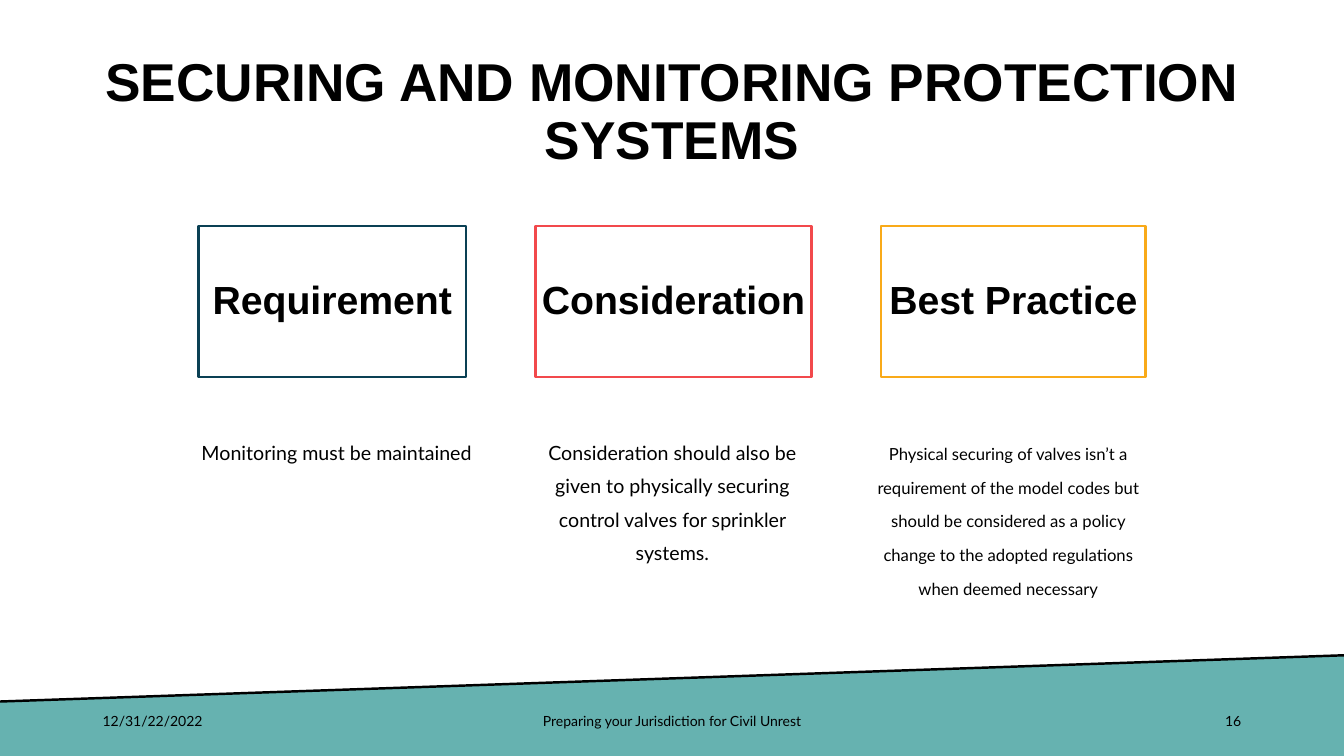
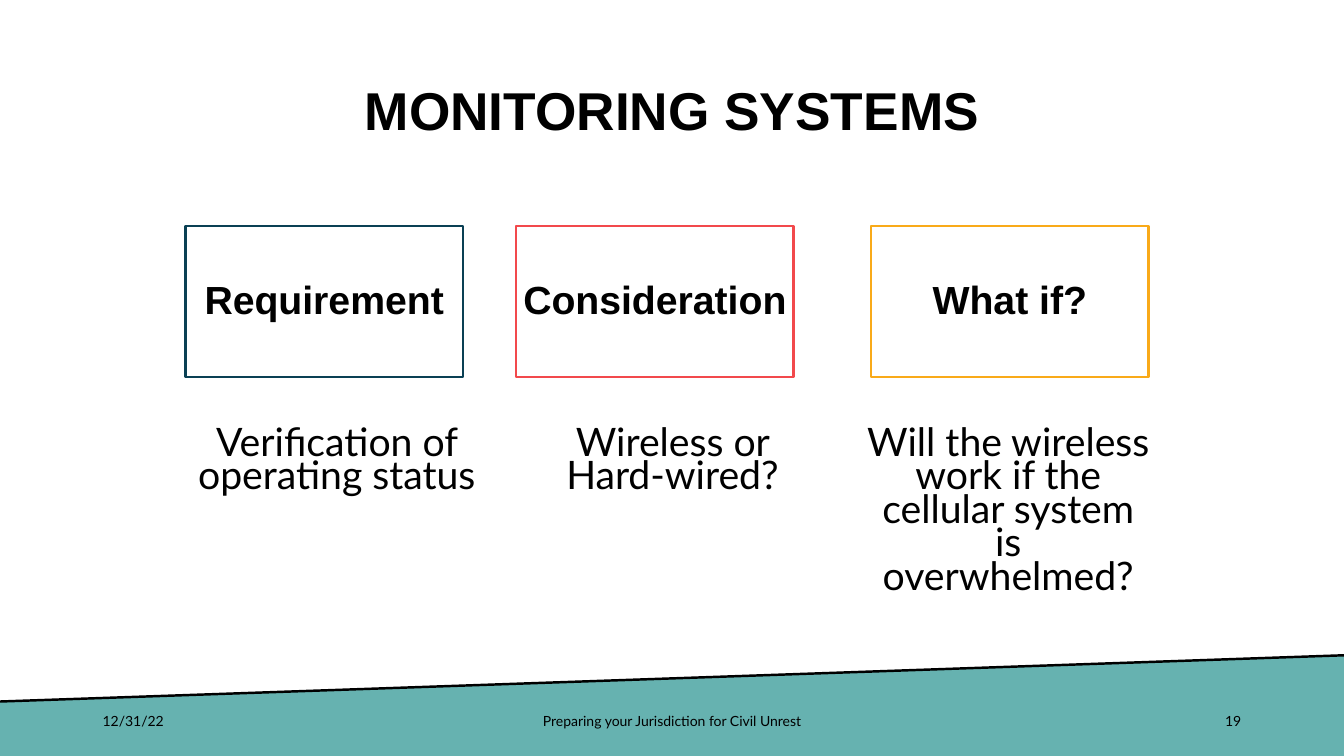
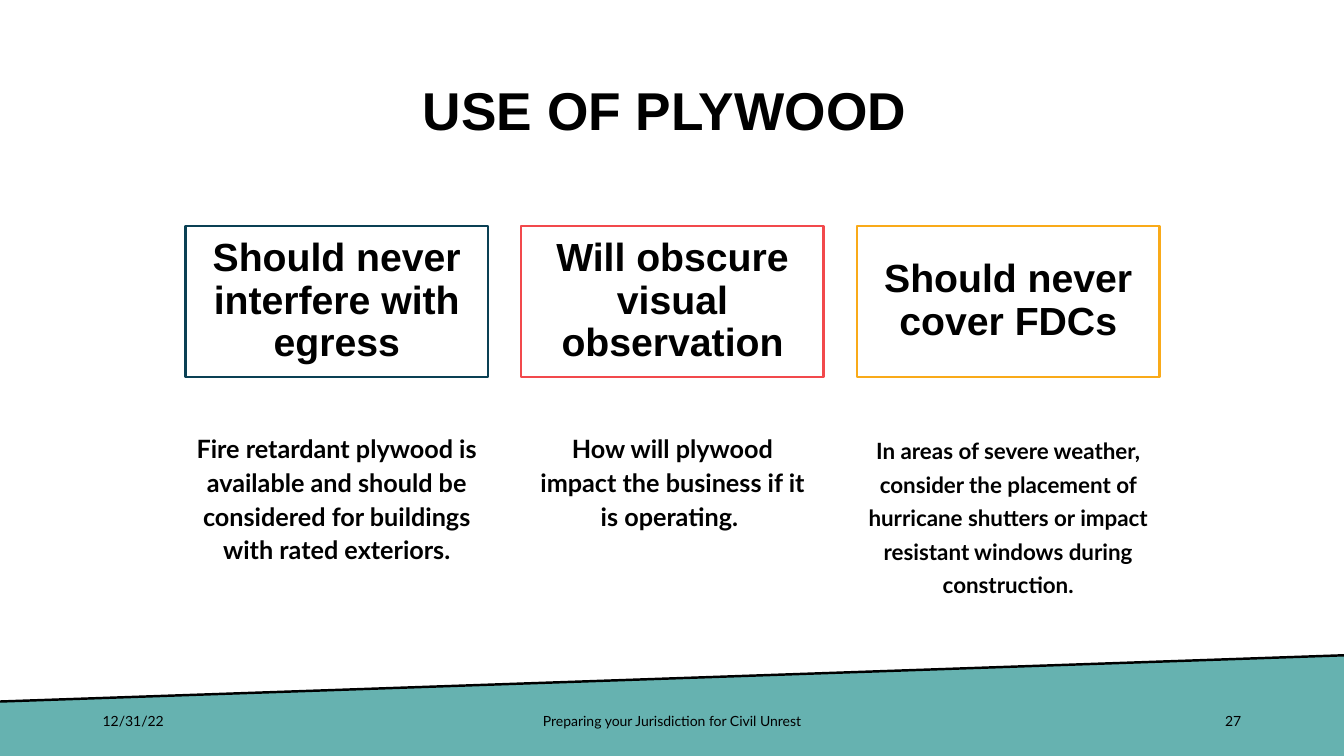
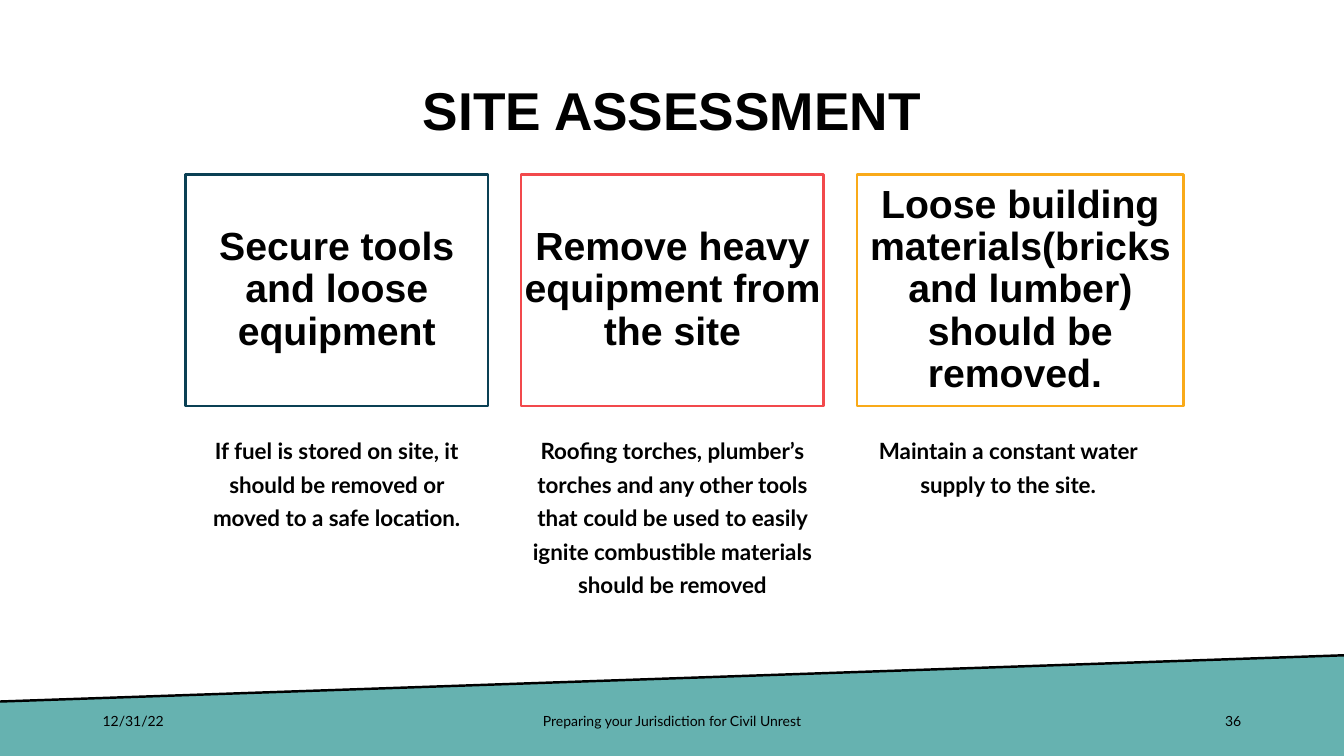
from dataclasses import dataclass

from lxml.etree import SubElement
from pptx import Presentation
from pptx.dml.color import RGBColor as RGB
from pptx.enum.shapes import MSO_CONNECTOR as Connector, MSO_SHAPE as Shape
from pptx.enum.text import MSO_ANCHOR as Anchor, PP_ALIGN as Align
from pptx.oxml.ns import qn
from pptx.util import Inches, Pt

FOOTER = "Preparing your Jurisdiction for Civil Unrest"

# columns: (heading, text); spans: left and width of heading boxes off the grid
SLIDES = [
    {
        "title": "SECURING AND MONITORING PROTECTION SYSTEMS",
        "date": "12/31/22/2022",
        "number": "16",
        "columns": [
            ("Requirement", "Monitoring must be maintained"),
            ("Consideration", "Consideration should also be given to physically "
                              "securing control valves for sprinkler systems."),
            ("Best Practice", "Physical securing of valves isn’t a requirement of the "
                              "model codes but should be considered as a policy change "
                              "to the adopted regulations when deemed necessary"),
        ],
        "sizes": (14, 14, 11.9),
        "bold": False,
        "spans": [(1.97, 2.65), (5.31, 2.74), (8.74, 2.62)],
    },
    {
        "title": "MONITORING SYSTEMS",
        "date": "12/31/22",
        "number": "19",
        "columns": [
            ("Requirement", "Verification of operating status"),
            ("Consideration", "Wireless or Hard-wired?"),
            ("What if?", "Will the wireless work if the cellular system is overwhelmed?"),
        ],
        "sizes": (28, 28, 28),
        "bold": False,
        "spans": [(1.84, 2.75), (5.12, 2.75), (8.64, 2.75)],
    },
    {
        "title": "USE OF PLYWOOD ",
        "date": "12/31/22",
        "number": "27",
        "columns": [
            ("Should never interfere with egress",
             "Fire retardant plywood is available and should be considered "
             "for buildings with rated exteriors."),
            ("Will obscure visual observation",
             "How will plywood impact the business if it is operating. "),
            ("Should never cover FDCs",
             "In areas of severe weather, consider the placement of hurricane "
             "shutters or impact resistant windows during construction."),
        ],
        "sizes": (18, 18, 16),
        "bold": True,
    },
    {
        "title": "SITE ASSESSMENT",
        "date": "12/31/22",
        "number": "36",
        "columns": [
            ("Secure tools and loose equipment",
             "If fuel is stored on site, it should be removed or moved to a safe location."),
            ("Remove heavy equipment from the site",
             "Roofing torches, plumber’s torches and any other tools that could be "
             "used to easily ignite combustible materials should be removed"),
            ("Loose building materials(bricks and lumber) should be removed. ",
             "Maintain a constant water supply to the site."),
        ],
        "sizes": (16, 16, 16),
        "bold": True,
        "spans": [(1.84, 3), (5.17, 3), (8.5, 3.24)],
        "heading_rows": (1.73, 2.3),
    },
]


@dataclass(frozen=True)
class Theme:
    ink: RGB = RGB.from_string("000000")
    band: RGB = RGB.from_string("66B2B0")
    accents: tuple = tuple(map(RGB.from_string, ("0A4054", "F2494C", "F9AA19")))
    heading_font: str = "Arial"
    body_font: str = "Lato"
    title_size: float = 38
    heading_size: float = 28
    footer_size: float = 10
    line_width: float = 1.75


THEME = Theme()
WIDTH, HEIGHT = 13.33, 7.5
MARGIN = 0.92
CONTENT_WIDTH = WIDTH - 2 * MARGIN
COLUMN_LEFT, COLUMN_WIDTH, COLUMN_PITCH = 1.84, 3, 3.33
HEADING_ROWS = (2.24, 1.5)
TEXT_ROWS = (4.22, 1.75)
FOOTER_ROWS = (6.95, 0.4)
SIDE_FOOTER, MIDDLE_FOOTER = 3, 4.5
BAND_LEFT, BAND_RIGHT = (-0.01, 6.96), (13.35, 6.5)

HEADING = {"name": THEME.heading_font, "bold": True}
TITLE_FONT = HEADING | {"size": Pt(THEME.title_size)}
HEADING_FONT = HEADING | {"size": Pt(THEME.heading_size)}
FOOTER_FONT = {"name": THEME.body_font, "size": Pt(THEME.footer_size)}
TIGHT = {"alignment": Align.CENTER, "line_spacing": 0.9}
BODY = {"alignment": Align.CENTER, "line_spacing": Pt(24), "space_before": Pt(10)}


def set_all(target, values):
    for name, value in values.items():
        setattr(target, name, value)


def inches(*lengths):
    return [Inches(length) for length in lengths]


def write(shape, text, font, layout, anchor=Anchor.MIDDLE, inset=None):
    frame = shape.text_frame
    set_all(frame, {"word_wrap": True, "vertical_anchor": anchor})
    if inset is not None:
        sides = ("left", "top", "right", "bottom")
        set_all(frame, {f"margin_{side}": Inches(inset) for side in sides})
    paragraph = frame.paragraphs[0]
    set_all(paragraph, layout)
    run = paragraph.add_run()
    run.text = text
    set_all(run.font, font)
    run.font.color.rgb = THEME.ink


def add_text(slide, left, rows, width, text, font, layout, **options):
    top, height = rows
    box = slide.shapes.add_textbox(*inches(left, top, width, height))
    write(box, text, font, layout, **options)


def add_band(slide):
    """Draw the sloping footer band and the rule along its upper edge."""
    corners = [BAND_LEFT, BAND_RIGHT, (BAND_RIGHT[0], HEIGHT), (0, 7.53)]
    points = [(round(x * 100), round(y * 100)) for x, y in corners]
    builder = slide.shapes.build_freeform(*points[0], scale=Inches(0.01))
    builder.add_line_segments(points[1:], close=True)
    band = builder.convert_to_shape()
    band.shadow.inherit = False
    band.fill.solid()
    band.fill.fore_color.rgb = THEME.band
    band.line.fill.background()

    edge = slide.shapes.add_connector(
        Connector.STRAIGHT, *inches(*BAND_RIGHT, *BAND_LEFT))
    set_line(edge, THEME.ink)
    SubElement(edge.element.spPr, qn("a:effectLst"))


def set_line(shape, color):
    shape.line.color.rgb = color
    shape.line.width = Pt(THEME.line_width)


def add_footer(slide, date, number):
    parts = [
        (MARGIN, SIDE_FOOTER, date, Align.LEFT),
        ((WIDTH - MIDDLE_FOOTER) / 2, MIDDLE_FOOTER, FOOTER, Align.CENTER),
        (WIDTH - MARGIN - SIDE_FOOTER, SIDE_FOOTER, number, Align.RIGHT),
    ]
    for left, width, text, alignment in parts:
        add_text(slide, left, FOOTER_ROWS, width, text, FOOTER_FONT,
                 {"alignment": alignment})


def add_heading(slide, span, rows, text, color, inset):
    (left, width), (top, height) = span, rows
    box = slide.shapes.add_shape(
        Shape.RECTANGLE, *inches(left, top, width, height))
    box.shadow.inherit = False
    box.fill.background()
    set_line(box, color)
    write(box, text, HEADING_FONT, TIGHT, inset=inset)


def add_columns(slide, content):
    grid = [(COLUMN_LEFT + i * COLUMN_PITCH, COLUMN_WIDTH) for i in range(3)]
    spans = content.get("spans", grid)
    rows = content.get("heading_rows", HEADING_ROWS)
    parts = zip(content["columns"], content["sizes"], grid, spans, THEME.accents)
    for index, ((heading, text), size, (left, width), span, color) in enumerate(parts):
        add_heading(slide, span, rows, heading, color, 0 if index else None)
        font = {"name": THEME.body_font, "size": Pt(size), "bold": content["bold"]}
        add_text(slide, left, TEXT_ROWS, width, text, font, BODY, anchor=Anchor.TOP)


def main():
    presentation = Presentation()
    presentation.slide_width, presentation.slide_height = inches(WIDTH, HEIGHT)
    blank = presentation.slide_layouts[6]
    for content in SLIDES:
        slide = presentation.slides.add_slide(blank)
        add_band(slide)
        add_text(slide, MARGIN, (0.4, 1.45), CONTENT_WIDTH, content["title"],
                 TITLE_FONT, TIGHT)
        add_columns(slide, content)
        add_footer(slide, content["date"], content["number"])
    presentation.save("out.pptx")


if __name__ == "__main__":
    main()
